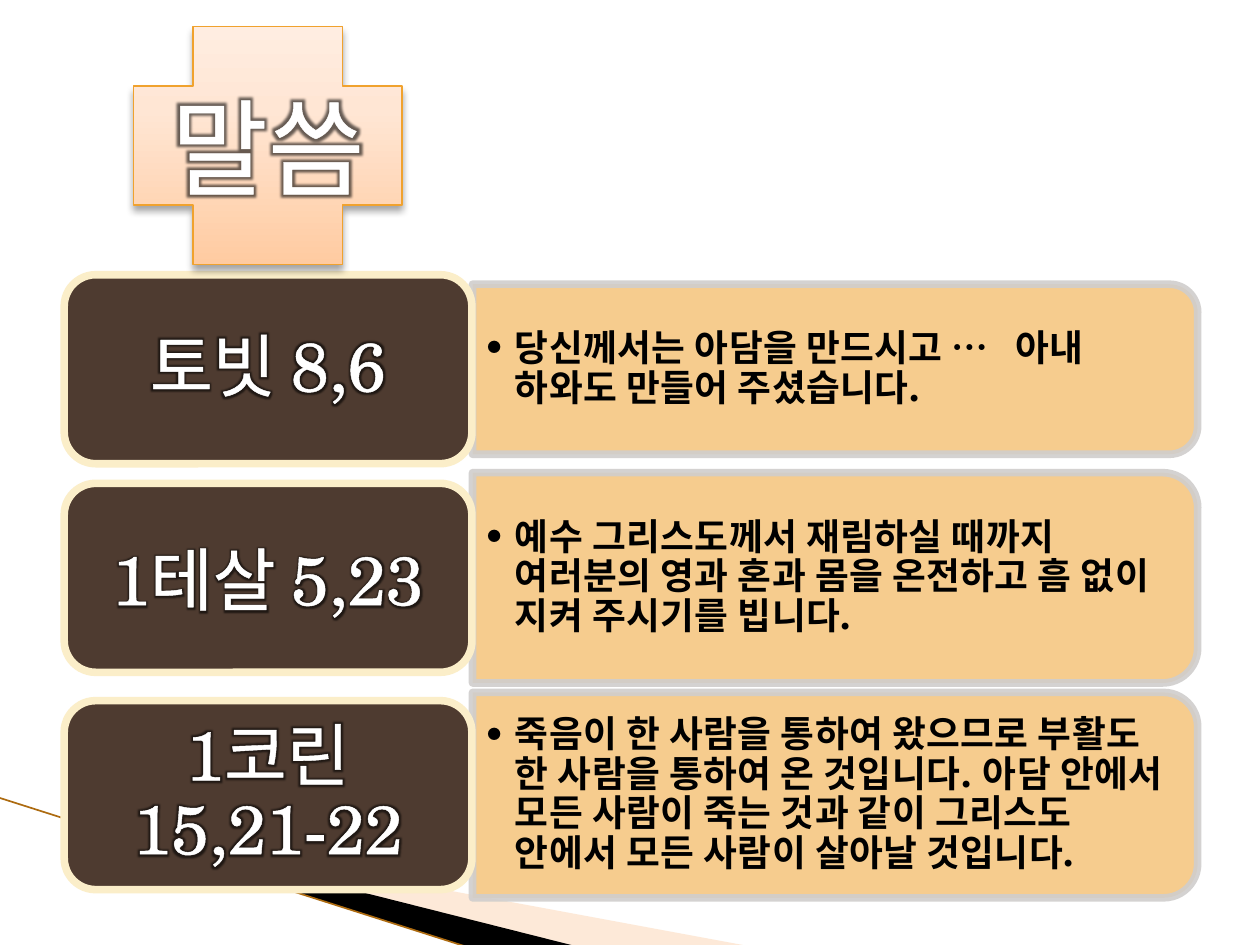
"""Build a slide of three scripture readings under a cross-shaped heading."""
import pptx
import pptx.dml.color
import pptx.enum.shapes
import pptx.enum.text
import pptx.oxml
import pptx.util

Pt = pptx.util.Pt
RGBColor = pptx.dml.color.RGBColor
SHAPES = pptx.enum.shapes.MSO_SHAPE
ALIGN = pptx.enum.text.PP_ALIGN
ANCHOR = pptx.enum.text.MSO_ANCHOR

WHITE = RGBColor(0xFF, 0xFF, 0xFF)
BLACK = RGBColor(0x00, 0x00, 0x00)
PEACH = RGBColor(0xFB, 0xC9, 0x9E)
SWOOSH = RGBColor(0xAD, 0x6B, 0x10)
PANEL = RGBColor(0xF6, 0xC7, 0x82)
PANEL_EDGE = RGBColor(0xD0, 0xCE, 0xCD)
BROWN = RGBColor(0x4E, 0x3B, 0x30)
CREAM = RGBColor(0xFB, 0xEE, 0xC9)
ORANGE = RGBColor(0xF0, 0xA2, 0x2E)
BRONZE = RGBColor(0x97, 0x70, 0x4A)
FONT = "TeX Gyre Schola"
NAMESPACE = 'xmlns:a="http://schemas.openxmlformats.org/drawingml/2006/main"'


def paint(shape, fill, line=None, width=0, opacity=100):
    shape.shadow.inherit = False
    shape.fill.solid()
    shape.fill.fore_color.rgb = fill
    if line is None:
        shape.line.fill.background()
    else:
        shape.line.color.rgb = line
        shape.line.width = Pt(width)
    if opacity < 100:
        for color in shape.element.spPr.xpath(".//a:srgbClr"):
            color.append(pptx.oxml.parse_xml(f'<a:alpha {NAMESPACE} val="{opacity * 1000}"/>'))


def write(shape, text, formats, insets, outline, outline_width, glow=0):
    frame = shape.text_frame
    frame_formats = {
        "word_wrap": True,
        "auto_size": pptx.enum.text.MSO_AUTO_SIZE.NONE,
        "vertical_anchor": ANCHOR.MIDDLE,
        "margin_left": Pt(insets[0]),
        "margin_right": Pt(insets[0]),
        "margin_top": Pt(insets[1]),
        "margin_bottom": Pt(insets[1]),
    }
    for name, value in frame_formats.items():
        setattr(frame, name, value)
    paragraph = frame.paragraphs[0]
    paragraph.alignment = formats["alignment"]
    paragraph.line_spacing = formats["line_spacing"]
    run = paragraph.add_run()
    run.text = text
    run.font.color.rgb = formats["color"]
    for name in ("size", "bold"):
        setattr(run.font, name, formats[name])
    properties = run.font._element
    properties.set("spc", formats["tracking"])
    properties.insert(0, pptx.oxml.parse_xml(
        f'<a:ln {NAMESPACE} w="{Pt(outline_width)}"><a:solidFill>'
        f'<a:srgbClr val="{outline}"/></a:solidFill></a:ln>'))
    if glow:
        properties.append(pptx.oxml.parse_xml(
            f'<a:effectLst {NAMESPACE}><a:glow rad="{Pt(glow)}"><a:srgbClr val="000000">'
            f'<a:alpha val="60000"/></a:srgbClr></a:glow></a:effectLst>'))
    run.font.name = FONT
    return paragraph


presentation = pptx.Presentation()
presentation.slide_width = Pt(720)
presentation.slide_height = Pt(540)
slide = presentation.slides.add_slide(presentation.slide_layouts[6])
shapes = slide.shapes

swooshes = [
    ([(39.6, 468.7), (428.4, 540.7), (328.3, 540.7), (39.6, 468)], PEACH, 40),
    ([(38.2, 467.3), (329, 540.7), (267.8, 541.4), (38.9, 468)], BLACK, 100),
]
for points, color, opacity in swooshes:
    corners = [(Pt(x), Pt(y)) for x, y in points]
    builder = shapes.build_freeform(*corners[0])
    builder.add_line_segments(corners[1:])
    paint(builder.convert_to_shape(), color, opacity=opacity)

curve_edge = shapes.add_connector(
    pptx.enum.shapes.MSO_CONNECTOR.STRAIGHT, Pt(-0.7), Pt(455.8), Pt(267.8), Pt(541.4))
curve_edge.line.color.rgb = SWOOSH
curve_edge.line.width = Pt(0.95)
curve_edge.element.spPr.append(pptx.oxml.parse_xml(f"<a:effectLst {NAMESPACE}/>"))

readings = [
    ("토빗 8,6", 0.9, 211, 97.2,
     "당신께서는 아담을 만드시고 …   아내 하와도 만들어 주셨습니다."),
    ("1테살 5,23", 1.0, 330.2, 120.2,
     "예수 그리스도께서 재림하실 때까지 여러분의 영과 혼과 몸을 온전하고 흠 없이 지켜 주시기를 빕니다."),
    ("1코린 15,21-22", 0.9, 454.4, 117.4,
     "죽음이 한 사람을 통하여 왔으므로 부활도 한 사람을 통하여 온 것입니다. 아담 안에서 모든 사람이 "
     "죽는 것과 같이 그리스도 안에서 모든 사람이 살아날 것입니다."),
]
verse_formats = {"alignment": ALIGN.LEFT, "line_spacing": 0.9, "color": BLACK,
                 "size": Pt(21), "bold": True, "tracking": "25"}
label_formats = {"alignment": ALIGN.CENTER, "color": WHITE, "size": Pt(39), "bold": False,
                 "tracking": "0"}
panel_center, panel_length = 477.2, 414.4
for citation, spacing, middle, height, verse in readings:
    panel = shapes.add_shape(
        SHAPES.ROUND_2_SAME_RECTANGLE, Pt(panel_center - height / 2),
        Pt(middle - panel_length / 2), Pt(height), Pt(panel_length))
    panel.rotation = 90
    paint(panel, PANEL, PANEL_EDGE, 4.33, 90)

    verse_height = height - 11
    verse_box = shapes.add_textbox(
        Pt(269.8), Pt(middle - verse_height / 2), Pt(408.8), Pt(verse_height))
    paragraph = write(verse_box, verse, verse_formats, (6.5, 3), BRONZE, 0.71)
    properties = paragraph._p.get_or_add_pPr()
    properties.set("marL", str(Pt(18)))
    properties.set("indent", str(Pt(-18)))
    properties.append(pptx.oxml.parse_xml(f'<a:buFont {NAMESPACE} typeface="{FONT}"/>'))
    properties.append(pptx.oxml.parse_xml(f'<a:buChar {NAMESPACE} char="•"/>'))

    card = shapes.add_shape(
        SHAPES.ROUNDED_RECTANGLE, Pt(36.7), Pt(middle - 54), Pt(233), Pt(108))
    paint(card, BROWN, CREAM, 4.33)
    label = shapes.add_textbox(Pt(41.8), Pt(middle - 48.6), Pt(222.5), Pt(97.2))
    write(label, citation, label_formats | {"line_spacing": spacing}, (17, 5.8),
          WHITE, 0.25, 5)

cross = shapes.add_shape(SHAPES.CROSS, Pt(76.3), Pt(15.1), Pt(153.4), Pt(136.1))
cross.line.color.rgb = ORANGE
cross.line.width = Pt(0.75)
cross_properties = cross.element.spPr
stops = "".join(
    f'<a:gs pos="{position * 1000}"><a:srgbClr val="{color}"/></a:gs>'
    for position, color in [(0, "FFCBA1"), (65, "FFE6D4"), (100, "FFEDE1")])
cross_properties.insert(2, pptx.oxml.parse_xml(
    f'<a:gradFill {NAMESPACE} rotWithShape="1"><a:gsLst>{stops}</a:gsLst>'
    f'<a:lin ang="16200000" scaled="0"/></a:gradFill>'))
cross_properties.append(pptx.oxml.parse_xml(
    f'<a:effectLst {NAMESPACE}><a:outerShdw blurRad="{Pt(4)}" dist="{Pt(3)}" dir="5400000">'
    f'<a:srgbClr val="000000"><a:alpha val="35000"/></a:srgbClr></a:outerShdw></a:effectLst>'))
heading_formats = label_formats | {"size": Pt(60), "line_spacing": 1.0}
write(cross, "말씀", heading_formats, (7.2, 3.6), WHITE, 1.45, 6)

presentation.save("out.pptx")
